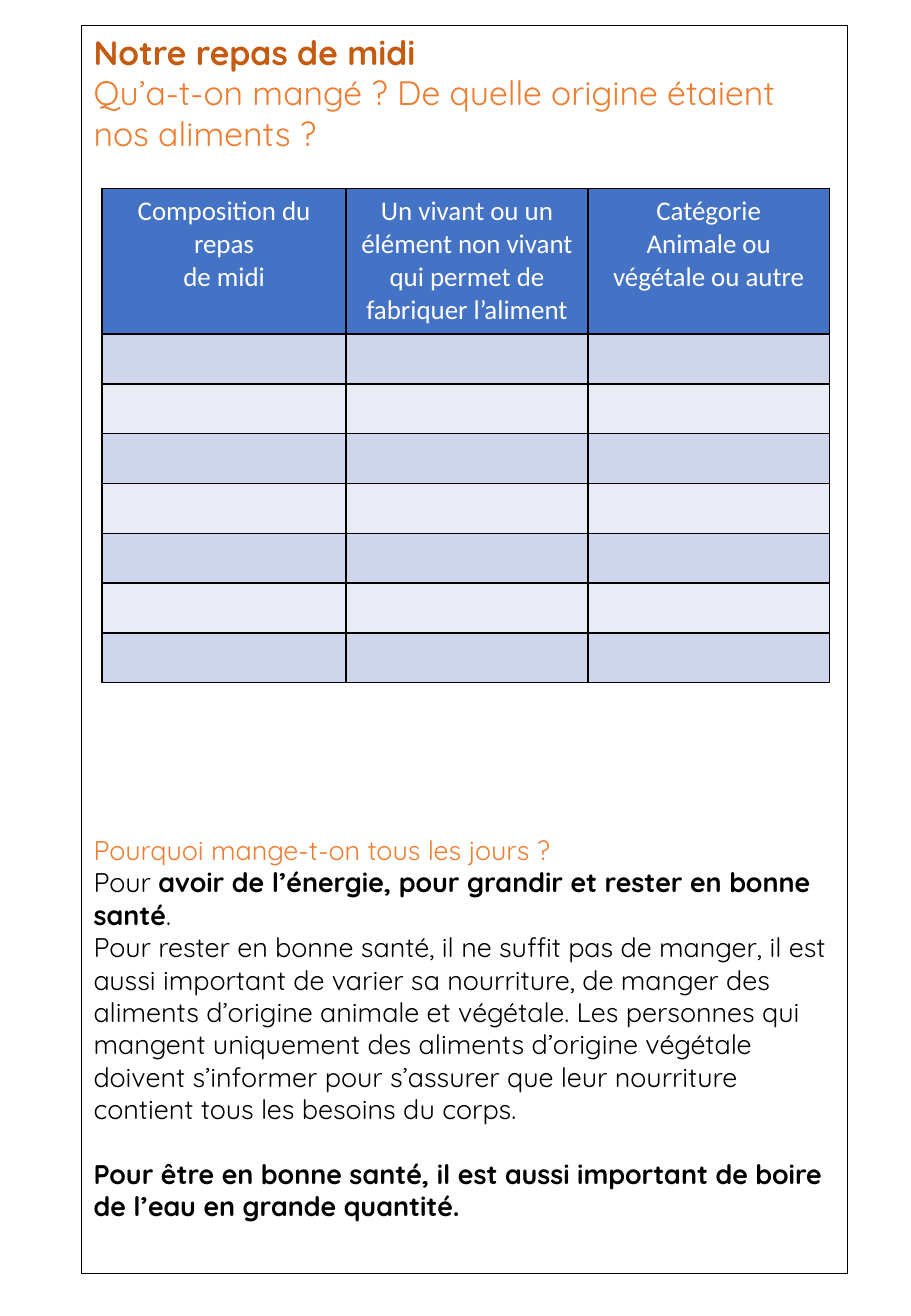
from lxml.etree import SubElement
from pptx import Presentation
from pptx.dml.color import RGBColor
from pptx.enum.shapes import MSO_SHAPE
from pptx.enum.text import MSO_ANCHOR, MSO_AUTO_SIZE, PP_ALIGN
from pptx.oxml.ns import qn
from pptx.util import Inches, Pt

COLORS = {
    "title": "C55A11",
    "question": "ED7D31",
    "text": "000000",
    "line": "000000",
    "header": "4472C4",
    "header_text": "FFFFFF",
    "band_dark": "CFD5EA",
    "band_light": "E9EBF5",
}


def rgb(name):
    return RGBColor.from_string(COLORS[name])


def add_text(p, text, font="Quicksand", size=16, color="text", bold=False):
    r = p.add_run()
    r.text = text
    r.font.name = font
    r.font.size = Pt(size)
    r.font.bold = bold
    r.font.color.rgb = rgb(color)


class Sheet:
    """Holds the style and the current slide of the worksheet."""

    def __init__(self, prs):
        self.s = prs.slides.add_slide(prs.slide_layouts[1])

    def frame(self, x, y, w, h):
        sp = self.s.shapes.add_shape(
            MSO_SHAPE.RECTANGLE, Inches(x), Inches(y), Inches(w), Inches(h))
        sp.shadow.inherit = False
        sp.fill.background()
        sp.line.color.rgb = rgb("line")
        sp.line.width = Pt(0.75)

    def placeholder(self, idx, x, y, w, h, paragraphs):
        sp = self.s.placeholders[idx]
        sp.left, sp.top, sp.width, sp.height = map(Inches, (x, y, w, h))
        tf = sp.text_frame
        tf.word_wrap = True
        tf.auto_size = MSO_AUTO_SIZE.NONE
        tf.vertical_anchor = MSO_ANCHOR.TOP
        for i, (before, runs) in enumerate(paragraphs):
            p = tf.add_paragraph() if i else tf.paragraphs[0]
            p.alignment = PP_ALIGN.LEFT
            p.line_spacing = 1.0
            p.space_before = Pt(before)
            p.space_after = Pt(0)
            pPr = p._p.get_or_add_pPr()
            pPr.set("marL", "0")
            pPr.set("indent", "0")
            SubElement(pPr, qn("a:buNone"))
            for text, style in runs:
                add_text(p, text, **style)

    def table(self, x, y, widths, heights, headers):
        gf = self.s.shapes.add_table(
            len(heights), len(widths), Inches(x), Inches(y),
            Inches(sum(widths)), Inches(sum(heights)))
        table = gf.table
        for col, width in zip(table.columns, widths):
            col.width = Inches(width)
        for i, (row, height) in enumerate(zip(table.rows, heights)):
            row.height = Inches(height)
            band = "band_dark" if i % 2 else "band_light"
            for cell in row.cells:
                self.cell(cell, band if i else "header")
        for cell, lines in zip(table.rows[0].cells, headers):
            tf = cell.text_frame
            for i, line in enumerate(lines):
                p = tf.add_paragraph() if i else tf.paragraphs[0]
                p.alignment = PP_ALIGN.CENTER
                add_text(p, line, font="Calibri", color="header_text")

    def cell(self, cell, fill):
        tcPr = cell._tc.get_or_add_tcPr()
        for side in ("lnL", "lnR", "lnT", "lnB"):
            ln = SubElement(tcPr, qn(f"a:{side}"), w=str(Pt(1)))
            solid = SubElement(ln, qn("a:solidFill"))
            SubElement(solid, qn("a:srgbClr"), val=COLORS["line"])
        cell.fill.solid()
        cell.fill.fore_color.rgb = rgb(fill)


def main():
    prs = Presentation()
    prs.slide_width, prs.slide_height = Inches(7.5), Inches(10.83)
    sheet = Sheet(prs)
    left, width = 0.67, 6.31
    sheet.frame(left, 0.21, width, 10.27)
    sheet.placeholder(0, left, 0.21, width, 1.15, [
        (0, [("Notre repas de midi", dict(size=20, color="title", bold=True))]),
        (0, [("Qu’a-t-on mangé ? De quelle origine étaient nos aliments ?",
              dict(size=20, color="question"))]),
    ])
    sheet.placeholder(1, left, 6.81, width, 3.6, [
        (0, [("Pourquoi mange-t-on tous les jours ?", dict(color="question"))]),
        (0, [("Pour ", {}),
             ("avoir de l’énergie, pour grandir et rester en bonne santé",
              dict(bold=True)),
             (".", {})]),
        (0, [("Pour rester en bonne santé, il ne suffit pas de manger, il est "
              "aussi important de varier sa nourriture, de manger des aliments "
              "d’origine animale et végétale. Les personnes qui mangent "
              "uniquement des aliments d’origine végétale doivent s’informer "
              "pour s’assurer que leur nourriture contient tous les besoins "
              "du corps.", {})]),
        (19.2, [("Pour être en bonne santé, il est aussi important de boire de "
                 "l’eau en grande quantité.", dict(bold=True))]),
    ])
    sheet.table(0.84, 1.55, [2.01, 1.99, 1.99], [1.2] + [0.41] * 7, [
        ["Composition du repas", "de midi"],
        ["Un vivant ou un élément non vivant qui permet de fabriquer l’aliment"],
        ["Catégorie", "Animale ou végétale ou autre"],
    ])
    prs.save("out.pptx")


if __name__ == "__main__":
    main()
